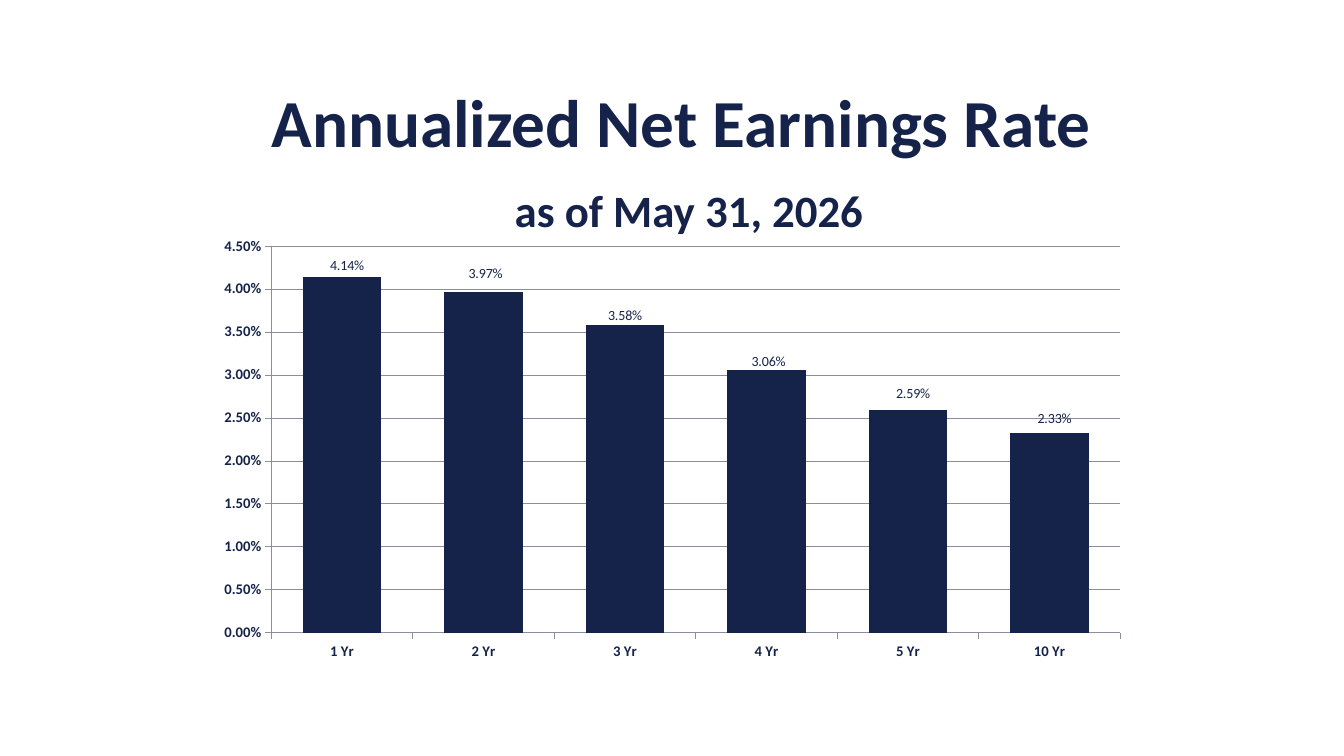
from lxml.etree import SubElement
from pptx import Presentation
from pptx.chart.data import CategoryChartData
from pptx.dml.color import RGBColor
from pptx.enum.chart import XL_CHART_TYPE, XL_LABEL_POSITION, XL_TICK_MARK
from pptx.enum.text import MSO_AUTO_SIZE, PP_ALIGN
from pptx.oxml import parse_xml
from pptx.oxml.ns import nsdecls, qn
from pptx.util import Pt

EMU_PER_PX = 914400 / 100.8
FONT = "Calibri"
NAVY = "15234A"
TITLE_NAVY = "152249"
GRID_GREY = "8A8D9C"
PERCENT = "0.00%"
PLOT_AREA = {"x": 0.065, "y": 0.031, "w": 0.931, "h": 0.833}
RATES = {
    "1 Yr": 0.0414,
    "2 Yr": 0.0397,
    "3 Yr": 0.0358,
    "4 Yr": 0.0306,
    "5 Yr": 0.0259,
    "10 Yr": 0.0233,
}
LABEL_SHIFTS = [(5, 0), (2, -6), (0, 2), (2, 4), (5, -5), (5, -2)]


def px(length):
    return round(length * EMU_PER_PX)


def color(hex_string):
    return RGBColor.from_string(hex_string)


def style_font(font, size, bold=False, ink=NAVY):
    font.name = FONT
    font.size = Pt(size)
    font.bold = bold
    font.color.rgb = color(ink)


def add_text(paragraph, text, **style):
    run = paragraph.add_run()
    run.text = text
    style_font(run.font, **style)


def manual_layout(**settings):
    layout = parse_xml(f"<c:layout {nsdecls('c')}><c:manualLayout/></c:layout>")
    for name, value in settings.items():
        SubElement(layout[0], qn(f"c:{name}")).set("val", str(value))
    return layout


def add_heading(slide, left, top, width, height):
    heading = slide.shapes.add_textbox(px(left), px(top), px(width), px(height))
    frame = heading.text_frame
    frame.word_wrap = True
    frame.auto_size = MSO_AUTO_SIZE.SHAPE_TO_FIT_TEXT
    title = frame.paragraphs[0]
    title.alignment = PP_ALIGN.CENTER
    large = {"size": 48, "bold": True, "ink": TITLE_NAVY}
    add_text(title, "Annualized Net Earnings Rate", **large)
    title.add_line_break()
    add_text(title, " ", **large)
    add_text(title, "as of May 31, 2026", size=32, bold=True, ink=TITLE_NAVY)


def style_axis(axis):
    axis.major_tick_mark = XL_TICK_MARK.OUTSIDE
    axis.minor_tick_mark = XL_TICK_MARK.NONE
    style_font(axis.tick_labels.font, 10.5, bold=True)
    axis.format.line.color.rgb = color(GRID_GREY)
    axis.format.line.width = Pt(0.75)


def add_rate_labels(rates, width, height):
    labels = rates.data_labels
    labels.show_value = True
    labels.number_format = PERCENT
    labels.number_format_is_linked = False
    labels.position = XL_LABEL_POSITION.OUTSIDE_END
    style_font(labels.font, 10)
    for index, (right, down) in enumerate(LABEL_SHIFTS):
        label = rates.points[index].data_label
        label.position = XL_LABEL_POSITION.OUTSIDE_END
        style_font(label.font, 10)
    for entry, (right, down) in zip(labels._element.findall(qn("c:dLbl")), LABEL_SHIFTS):
        shift = manual_layout(x=round(right / width, 4), y=round(down / height, 4))
        entry.find(qn("c:idx")).addnext(shift)


def add_rate_chart(slide, left, top, width, height):
    earnings = CategoryChartData(number_format=PERCENT)
    earnings.categories = list(RATES)
    earnings.add_series("Series 1", list(RATES.values()))
    chart = slide.shapes.add_chart(
        XL_CHART_TYPE.COLUMN_CLUSTERED,
        px(left), px(top), px(width), px(height), earnings,
    ).chart
    chart.has_legend = False
    chart.has_title = False
    style_font(chart.font, 18)

    periods, scale = chart.category_axis, chart.value_axis
    style_axis(periods)
    style_axis(scale)
    scale.minimum_scale = 0
    scale.maximum_scale = 0.045
    scale.major_unit = 0.005
    scale.tick_labels.number_format = PERCENT
    scale.tick_labels.number_format_is_linked = False
    scale.has_major_gridlines = True
    scale.major_gridlines.format.line.color.rgb = color(GRID_GREY)
    scale.major_gridlines.format.line.width = Pt(0.75)

    columns = chart.plots[0]
    columns.gap_width = 80
    columns.vary_by_categories = False
    rates = columns.series[0]
    rates.format.fill.solid()
    rates.format.fill.fore_color.rgb = color(NAVY)
    add_rate_labels(rates, width, height)

    plot_area = chart._chartSpace.chart.plotArea
    for automatic in plot_area.findall(qn("c:layout")):
        plot_area.remove(automatic)
    plot_area.insert(0, manual_layout(
        layoutTarget="inner", xMode="edge", yMode="edge", **PLOT_AREA))


def main():
    deck = Presentation()
    deck.slide_width, deck.slide_height = px(1344), px(756)
    slide = deck.slides.add_slide(deck.slide_layouts[6])
    slide.background.fill.solid()
    slide.background.fill.fore_color.rgb = color("FFFFFF")
    add_heading(slide, 240, 75, 883, 173)
    add_rate_chart(slide, 212, 232, 912, 464)
    deck.save("out.pptx")


if __name__ == "__main__":
    main()
